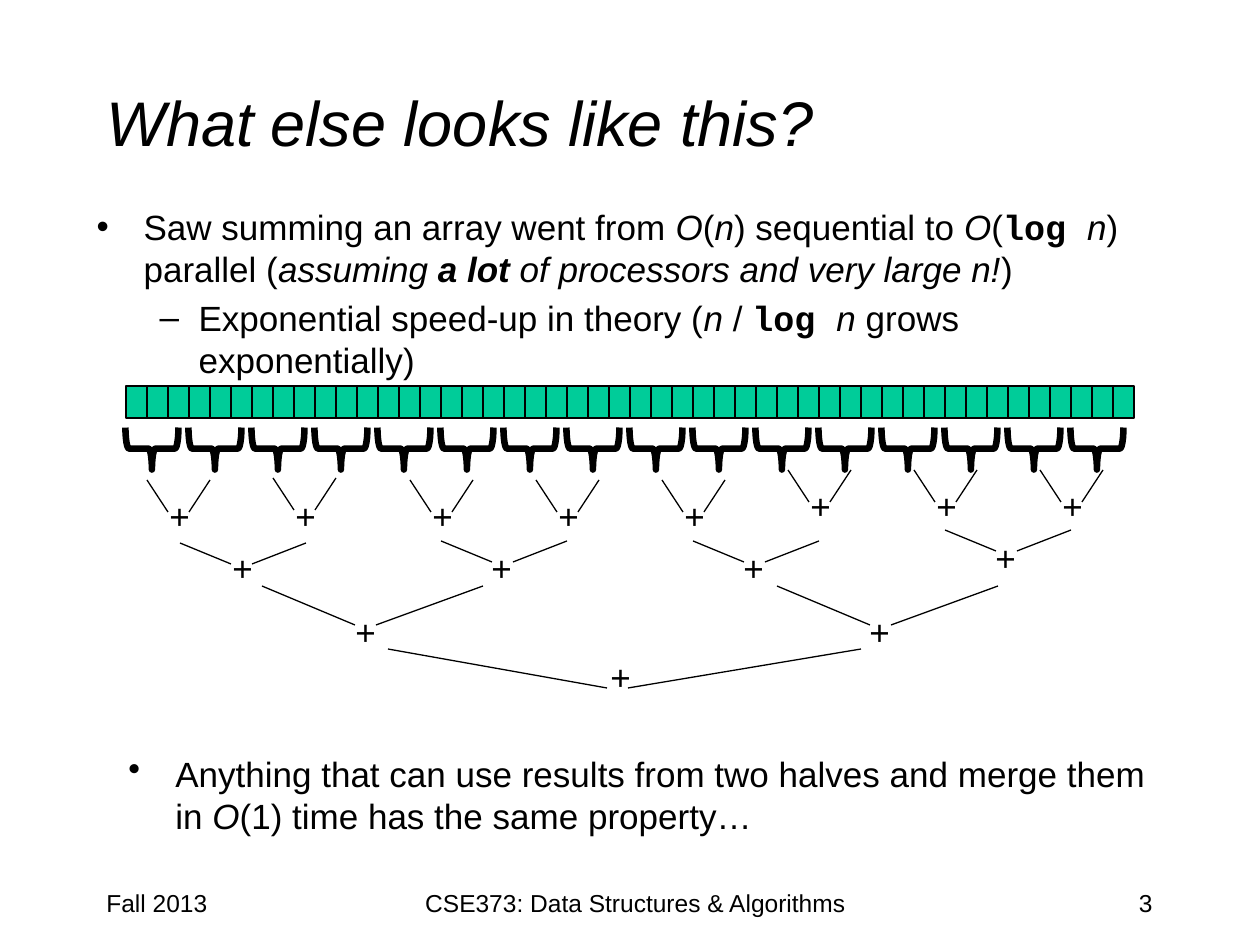
"""Build a slide showing parallel array summing as a binary tree of additions."""
from dataclasses import dataclass

from pptx import Presentation
from pptx.dml.color import RGBColor
from pptx.enum.shapes import MSO_CONNECTOR as Connector, MSO_SHAPE as Shape
from pptx.enum.text import MSO_ANCHOR as Anchor, MSO_AUTO_SIZE as AutoSize, PP_ALIGN as Align
from pptx.oxml import parse_xml
from pptx.oxml.ns import nsdecls, qn
from pptx.util import Emu, Pt


@dataclass(frozen=True)
class Theme:
    ink: RGBColor = RGBColor(0x00, 0x00, 0x00)
    cell: RGBColor = RGBColor(0x00, 0xCC, 0x99)
    font: str = "Arial"
    code_font: str = "Courier New"
    title_size: int = 36
    text_size: int = 20
    footer_size: int = 14
    thin: float = 0.75
    thick: float = 3.75


THEME = Theme()
PX_PER_INCH = 126

TITLE = ("What else looks like this?", (94, 42, 1071, 158))
BODY_BOX = (84, 199, 1113, 158)
BODY = [
    (0, [("Saw summing an array went from ", ""), ("O", "i"), ("(", ""), ("n", "i"),
         (") sequential to ", ""), ("O", "i"), ("(", ""), ("log ", "code"), ("n", "i"),
         (") parallel (", ""), ("assuming ", "i"), ("a lot", "bi"),
         (" of processors and very large n!", "i"), (")", "")]),
    (1, [("Exponential speed-up in theory (", ""), ("n ", "i"), ("/ ", ""),
         ("log ", "code"), ("n ", "i"), ("grows exponentially)", "")]),
]
CLOSING_BOX = (116, 746, 1071, 105)
CLOSING = [
    (0, [("Anything that can use results from two halves and merge them in ", ""),
         ("O", "i"), ("(1) time has the same property…", "")]),
]
FOOTERS = [
    ("Fall 2013", (94, 882, 262, 63), Align.LEFT),
    ("CSE373: Data Structures & Algorithms", (399, 882, 473, 63), Align.CENTER),
    ("3", (903, 882, 262, 63), Align.RIGHT),
]
BULLETS = [("•", 47, -47), ("–", 102, -39)]

CELL_COUNT, CELL_LEFT, CELL_TOP, CELL_WIDTH, CELL_HEIGHT = 48, 126, 386, 21, 32
BRACE_COUNT, BRACE_LEFT, BRACE_TOP, BRACE_WIDTH, BRACE_HEIGHT = 16, 131, 422, 42, 53
BRACE_PITCH = 3 * CELL_WIDTH
JOIN_GAP = 21
PLUS_WIDTH, PLUS_HEIGHT = 45, 55

# Each level: width, drop, then nodes of left, top, join, plus left, plus top
TREE = [
    (63, 32, [(147, 480, 168, 157, 488), (273, 478, 294, 283, 488),
              (410, 480, 431, 420, 488), (536, 480, 557, 546, 488),
              (662, 480, 683, 672, 488), (788, 470, 809, 798, 478),
              (914, 470, 935, 924, 478), (1040, 470, 1061, 1050, 478)]),
    (126, 21, [(180, 543, 231, 220, 540), (441, 541, 492, 479, 540),
               (693, 541, 744, 731, 540), (945, 530, 996, 983, 530)]),
    (221, 39, [(262, 586, 355, 343, 604), (777, 586, 870, 857, 604)]),
    (473, 39, [(388, 649, 607, 598, 649)]),
]


def px(length):
    return Emu(round(length * 914400 / PX_PER_INCH))


def place(part, box):
    part.left, part.top, part.width, part.height = map(px, box)


def style_run(run, size, style=""):
    font = run.font
    font.name = THEME.code_font if style == "code" else THEME.font
    font.size = Pt(size)
    font.color.rgb = THEME.ink
    font.bold = style in ("code", "bi")
    font.italic = style in ("i", "bi")


def fill_bullets(frame, items):
    frame.word_wrap = True
    frame.auto_size = AutoSize.NONE
    for index, (level, pieces) in enumerate(items):
        paragraph = frame.paragraphs[0] if index == 0 else frame.add_paragraph()
        paragraph.level = level
        mark, margin, indent = BULLETS[level]
        props = paragraph._p.get_or_add_pPr()
        props.set("marL", str(px(margin)))
        props.set("indent", str(px(indent)))
        props.append(parse_xml(
            f'<a:spcBef {nsdecls("a")}><a:spcPct val="20000"/></a:spcBef>'))
        props.append(parse_xml(f'<a:buChar {nsdecls("a")} char="{mark}"/>'))
        for text, style in pieces:
            run = paragraph.add_run()
            run.text = text
            style_run(run, THEME.text_size, style)


def add_label(shapes, text, box, size, align=Align.LEFT, wrap=True):
    label = shapes.add_textbox(*map(px, box))
    frame = label.text_frame
    frame.text = text
    frame.word_wrap = wrap
    frame.paragraphs[0].alignment = align
    style_run(frame.paragraphs[0].runs[0], size)


def add_outline(shapes, kind, box, weight):
    outline = shapes.add_shape(kind, *map(px, box))
    outline.shadow.inherit = False
    outline.line.color.rgb = THEME.ink
    outline.line.width = Pt(weight)
    return outline


def add_branch(shapes, start, end):
    branch = shapes.add_connector(Connector.STRAIGHT, *map(px, start + end))
    branch.line.color.rgb = THEME.ink
    branch.line.width = Pt(THEME.thin)
    properties = branch._element.find(qn("p:spPr"))
    properties.append(parse_xml(f'<a:effectLst {nsdecls("a")}/>'))


def add_array(shapes):
    for index in range(CELL_COUNT):
        box = (CELL_LEFT + index * CELL_WIDTH, CELL_TOP, CELL_WIDTH, CELL_HEIGHT)
        cell = add_outline(shapes, Shape.RECTANGLE, box, THEME.thin)
        cell.fill.solid()
        cell.fill.fore_color.rgb = THEME.cell
    for index in range(BRACE_COUNT):
        box = (BRACE_LEFT + index * BRACE_PITCH, BRACE_TOP, BRACE_WIDTH, BRACE_HEIGHT)
        brace = add_outline(shapes, Shape.LEFT_BRACE, box, THEME.thick)
        brace.fill.background()
        brace.rotation = 270


def add_tree(shapes):
    for width, drop, nodes in TREE:
        for left, top, join, plus_left, plus_top in nodes:
            add_branch(shapes, (left, top), (join, top + drop))
            add_branch(shapes, (left + width, top), (join + JOIN_GAP, top + drop))
            add_label(shapes, "+", (plus_left, plus_top, PLUS_WIDTH, PLUS_HEIGHT),
                      THEME.text_size, wrap=False)


def main():
    deck = Presentation()
    deck.slide_width, deck.slide_height = px(1260), px(945)
    slide = deck.slides.add_slide(deck.slide_layouts[1])
    shapes = slide.shapes

    title, (title_text, title_box) = shapes.title, TITLE
    place(title, title_box)
    title.text_frame.text = title_text
    title.text_frame.vertical_anchor = Anchor.MIDDLE
    title.text_frame.paragraphs[0].alignment = Align.LEFT
    style_run(title.text_frame.paragraphs[0].runs[0], THEME.title_size, "i")

    body = slide.placeholders[1]
    place(body, BODY_BOX)
    fill_bullets(body.text_frame, BODY)

    add_array(shapes)
    add_tree(shapes)

    closing = shapes.add_textbox(*map(px, CLOSING_BOX))
    fill_bullets(closing.text_frame, CLOSING)
    for text, box, align in FOOTERS:
        add_label(shapes, text, box, THEME.footer_size, align)

    deck.save("out.pptx")


if __name__ == "__main__":
    main()
